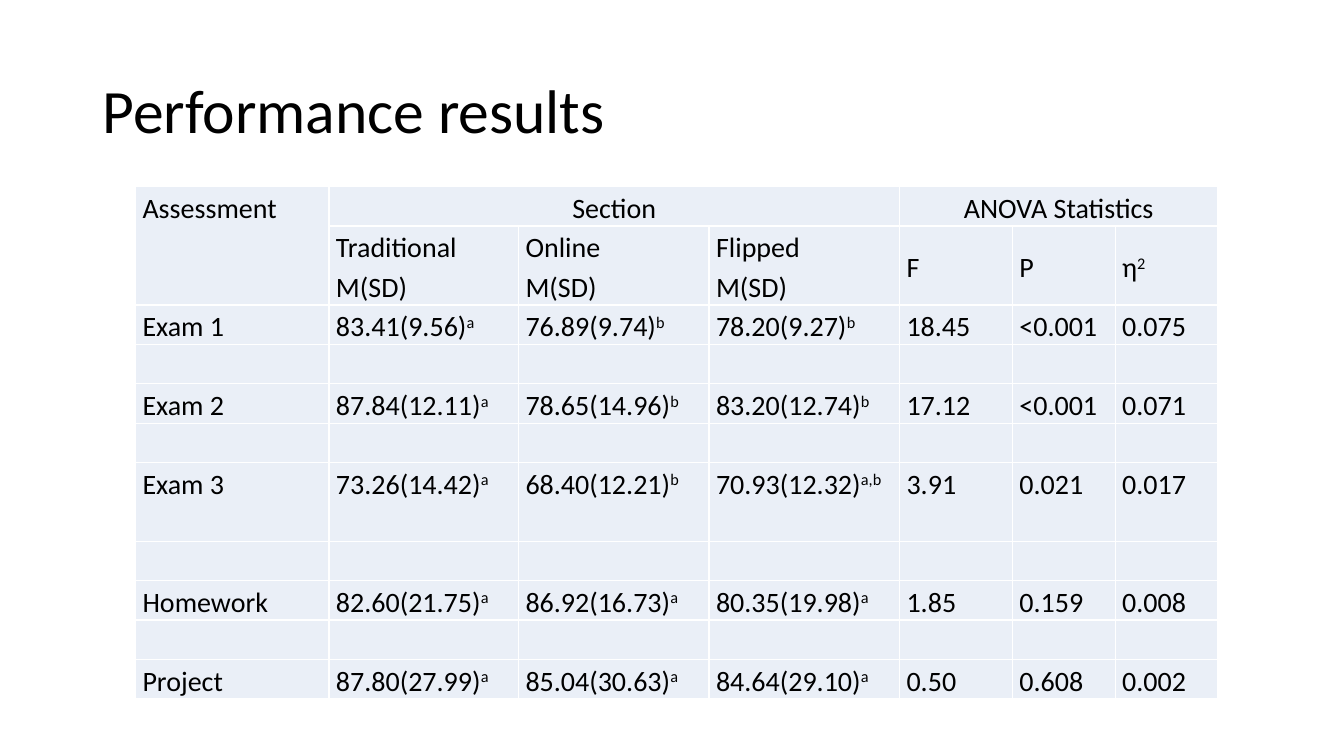
from lxml import etree
from pptx import Presentation
from pptx.dml.color import RGBColor
from pptx.enum.text import MSO_ANCHOR, PP_ALIGN
from pptx.oxml.ns import qn
from pptx.util import Pt

LEFT, CENTER = PP_ALIGN.LEFT, PP_ALIGN.CENTER
TOP, MIDDLE = MSO_ANCHOR.TOP, MSO_ANCHOR.MIDDLE
BLACK = RGBColor(0x00, 0x00, 0x00)
WHITE = RGBColor(0xFF, 0xFF, 0xFF)
PALE_BLUE = RGBColor(0xEA, 0xEF, 0xF7)
FONT = "Calibri"
LINE_HEIGHT = 28.1

COLUMN_WIDTHS = [138.2, 135.4, 136.1, 136.1, 80.6, 73.4, 73.4]
TALL_ROWS = (1, 6)
# A caret starts a superscript
HEADINGS = [
    ["Assessment", "Section", "", "", "ANOVA Statistics", "", ""],
    ["", "Traditional\nM(SD)", "Online\nM(SD)", "Flipped\nM(SD)", "F", "P", "η^2"],
]
RESULTS = [
    ["Exam 1", "83.41(9.56)^a", "76.89(9.74)^b", "78.20(9.27)^b", "18.45", "<0.001", "0.075"],
    ["Exam 2", "87.84(12.11)^a", "78.65(14.96)^b", "83.20(12.74)^b", "17.12", "<0.001", "0.071"],
    ["Exam 3", "73.26(14.42)^a", "68.40(12.21)^b", "70.93(12.32)^a,b", "3.91", "0.021", "0.017"],
    ["Homework", "82.60(21.75)^a", "86.92(16.73)^a", "80.35(19.98)^a", "1.85", "0.159", "0.008"],
    ["Project", "87.80(27.99)^a", "85.04(30.63)^a", "84.64(29.10)^a", "0.50", "0.608", "0.002"],
]
rows = HEADINGS + RESULTS[:1]
for result in RESULTS[1:]:
    rows += [[""] * len(COLUMN_WIDTHS), result]


def add_borders(cell):
    properties = cell._tc.get_or_add_tcPr()
    for side in ("a:lnL", "a:lnR", "a:lnT", "a:lnB"):
        border = etree.SubElement(properties, qn(side), w=str(Pt(1)))
        fill = etree.SubElement(border, qn("a:solidFill"))
        etree.SubElement(fill, qn("a:srgbClr"), val=str(WHITE))


def write_line(paragraph, line, size):
    """Add the text of one line, with anything after a caret as superscript."""
    for position, part in enumerate(line.split("^")):
        run = paragraph.add_run()
        run.text = part
        run.font.name = FONT
        run.font.size = Pt(size)
        run.font.color.rgb = BLACK
        if position:
            run._r.get_or_add_rPr().set("baseline", "30000")


presentation = Presentation()
presentation.slide_width, presentation.slide_height = Pt(960), Pt(540)
slide = presentation.slides.add_slide(presentation.slide_layouts[5])

title = slide.shapes.title
title_place = {"left": 66, "top": 28.8, "width": 828, "height": 104.4}
for side, length in title_place.items():
    setattr(title, side, Pt(length))
title.text_frame.vertical_anchor = MIDDLE
heading = title.text_frame.paragraphs[0]
heading.alignment = LEFT
heading.line_spacing = 0.9
write_line(heading, "Performance results", 44)

table = slide.shapes.add_table(
    len(rows), len(COLUMN_WIDTHS), Pt(96.8), Pt(133.3),
    Pt(sum(COLUMN_WIDTHS)), Pt(LINE_HEIGHT * (len(rows) + len(TALL_ROWS)))
).table
table.first_row = table.horz_banding = False
for column, width in zip(table.columns, COLUMN_WIDTHS):
    column.width = Pt(width)

cell_margins = {"margin_left": 5, "margin_right": 5, "margin_top": 0, "margin_bottom": 0}
for r, row in enumerate(rows):
    table.rows[r].height = Pt(LINE_HEIGHT * (2 if r in TALL_ROWS else 1))
    for c, text in enumerate(row):
        cell = table.cell(r, c)
        add_borders(cell)
        cell.fill.solid()
        cell.fill.fore_color.rgb = PALE_BLUE
        for margin, length in cell_margins.items():
            setattr(cell, margin, Pt(length))
        cell.vertical_anchor = MIDDLE if r == 1 and c >= 4 else TOP
        if not text:
            continue
        for number, line in enumerate(text.split("\n")):
            frame = cell.text_frame
            paragraph = frame.add_paragraph() if number else frame.paragraphs[0]
            paragraph.alignment = CENTER if r == 0 and c else LEFT
            paragraph.line_spacing = 1.15
            write_line(paragraph, line, 20)

for first, last in [((0, 0), (1, 0)), ((0, 1), (0, 3)), ((0, 4), (0, 6))]:
    table.cell(*first).merge(table.cell(*last))

presentation.save("out.pptx")
